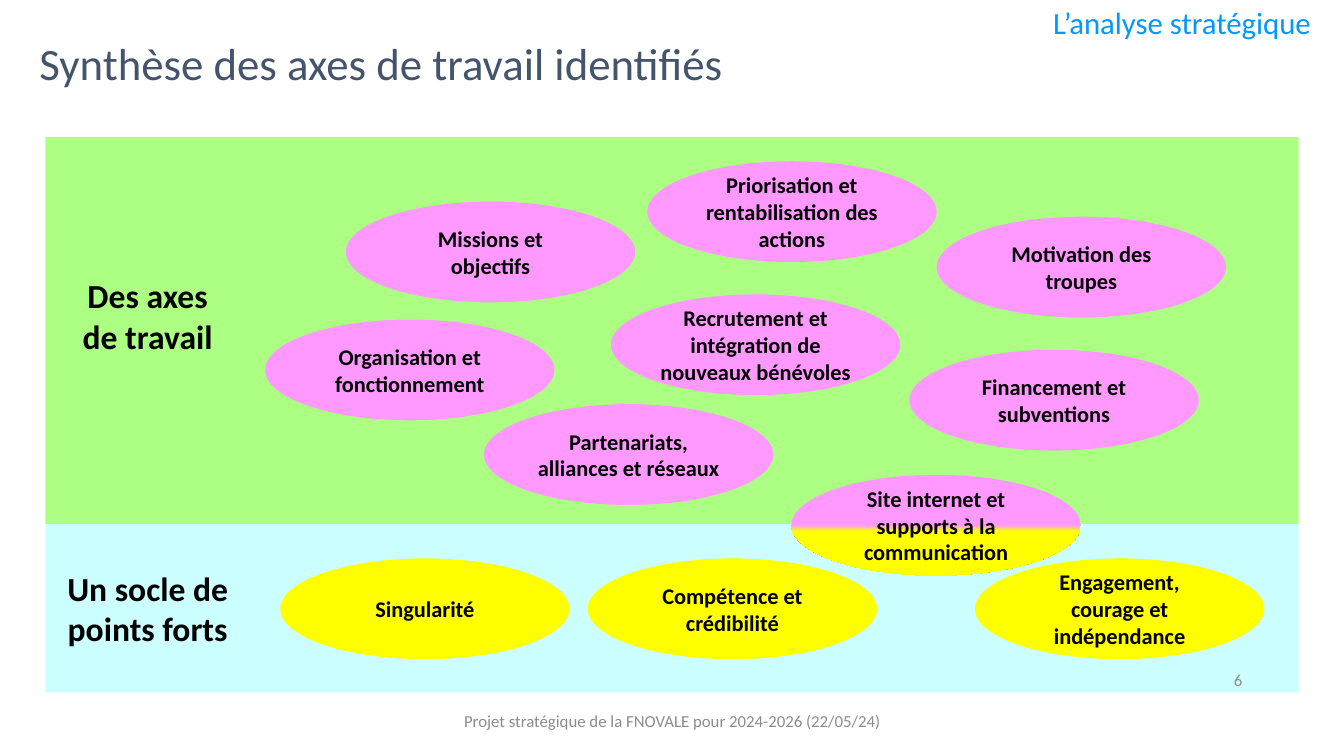
import copy
import pptx
import pptx.dml.color
import pptx.enum.shapes
import pptx.enum.text
import pptx.oxml.ns
import pptx.util
from lxml import etree

Inches = pptx.util.Inches
Align = pptx.enum.text.PP_ALIGN
Anchor = pptx.enum.text.MSO_ANCHOR
Kind = pptx.enum.shapes.MSO_SHAPE
rgb = pptx.dml.color.RGBColor.from_string
qn = pptx.oxml.ns.qn

PINK, YELLOW, BLACK, GREY = "FF99FF", "FFFF00", "000000", "8C8C8C"


def write(shape, text, size, color, align, bold=False, anchor=Anchor.TOP):
    frame = shape.text_frame
    frame.word_wrap = True
    frame.auto_size = pptx.enum.text.MSO_AUTO_SIZE.NONE
    frame.vertical_anchor = anchor
    frame.text = text
    for para in frame.paragraphs:
        para.alignment = align
        para.font.name = "Calibri"
        para.font.size = pptx.util.Pt(size)
        para.font.bold = bold
        para.font.color.rgb = rgb(color)


def draw(kind, left, top, width, height, color):
    shape = slide.shapes.add_shape(
        kind, Inches(left), Inches(top), Inches(width), Inches(height))
    shape.shadow.inherit = False
    shape.fill.solid()
    shape.fill.fore_color.rgb = rgb(color)
    shape.line.fill.background()
    return shape


deck = pptx.Presentation()
deck.slide_width, deck.slide_height = Inches(13.33), Inches(7.5)
slide = deck.slides.add_slide(deck.slide_layouts[5])

# Title
title = slide.shapes.title
title.left, title.top = Inches(0), Inches(0.3)
title.width, title.height = Inches(13.33), Inches(0.64)
write(title, "Synthèse des axes de travail identifiés", 32, "44546A", Align.LEFT)
title.text_frame.margin_left = Inches(0.39)

# Background bands
axes = draw(Kind.RECTANGLE, 0.45, 1.36, 12.43, 3.84, "99FF66")
tint = axes.fill._xPr.find(".//" + qn("a:srgbClr"))
etree.SubElement(tint, qn("a:alpha")).set("val", "80000")
draw(Kind.RECTANGLE, 0.45, 5.2, 12.43, 1.67, "CCFFFF")

# Topic bubbles
topics = [
    (5.83, 5.54, YELLOW, "Compétence et crédibilité"),
    (9.67, 5.54, YELLOW, "Engagement, courage et indépendance"),
    (2.78, 5.54, YELLOW, "Singularité"),
    (7.85, 4.71, PINK, "Site internet et supports à la communication"),
    (6.06, 2.92, PINK, "Recrutement et intégration de nouveaux bénévoles"),
    (3.43, 2, PINK, "Missions et objectifs"),
    (2.63, 3.17, PINK, "Organisation et fonctionnement"),
    (6.42, 1.6, PINK, "Priorisation et rentabilisation des actions"),
    (4.8, 4.01, PINK, "Partenariats, alliances et réseaux"),
    (9.02, 3.47, PINK, "Financement et subventions"),
    (9.29, 2.15, PINK, "Motivation des troupes"),
]
bubbles = {}
for left, top, color, text in topics:
    bubble = draw(Kind.OVAL, left, top, 2.87, 1, color)
    write(bubble, text, 16, BLACK, Align.CENTER, True, Anchor.MIDDLE)
    bubbles[text.split()[0]] = bubble

wide = bubbles["Recrutement"].text_frame
wide.margin_left = wide.margin_right = Inches(0.04)

# The website bubble belongs to both bands
fill = bubbles["Site"].fill
fill.gradient()
fill.gradient_angle = 270
stop_list = fill._xPr.find(".//" + qn("a:gsLst"))
for stop in list(stop_list):
    stop_list.append(copy.deepcopy(stop))
blend = [(0, PINK), (0.5, PINK), (0.56, YELLOW), (1, YELLOW)]
for stop, (place, color) in zip(fill.gradient_stops, blend):
    stop.position = place
    stop.color.rgb = rgb(color)

# Band labels, header, footer and page number
labels = [
    (9.42, 6.54, 3, 0.4, "6", 12, GREY, Align.RIGHT, False, Anchor.MIDDLE),
    (0.48, 5.58, 1.97, 0.91, "Un socle de points forts", 24, BLACK,
     Align.CENTER, True, Anchor.TOP),
    (0.48, 2.68, 1.97, 0.91, "Des axes\nde travail", 24, BLACK,
     Align.CENTER, True, Anchor.TOP),
    (0.23, -0.01, 12.87, 0.47, "L’analyse stratégique", 22, "0099FF",
     Align.RIGHT, False, Anchor.TOP),
    (4.42, 6.95, 4.5, 0.4,
     "Projet stratégique de la FNOVALE pour 2024-2026 (22/05/24)", 12, GREY,
     Align.CENTER, False, Anchor.MIDDLE),
]
for left, top, width, height, *style in labels:
    box = slide.shapes.add_textbox(
        Inches(left), Inches(top), Inches(width), Inches(height))
    write(box, *style)

deck.save("out.pptx")
